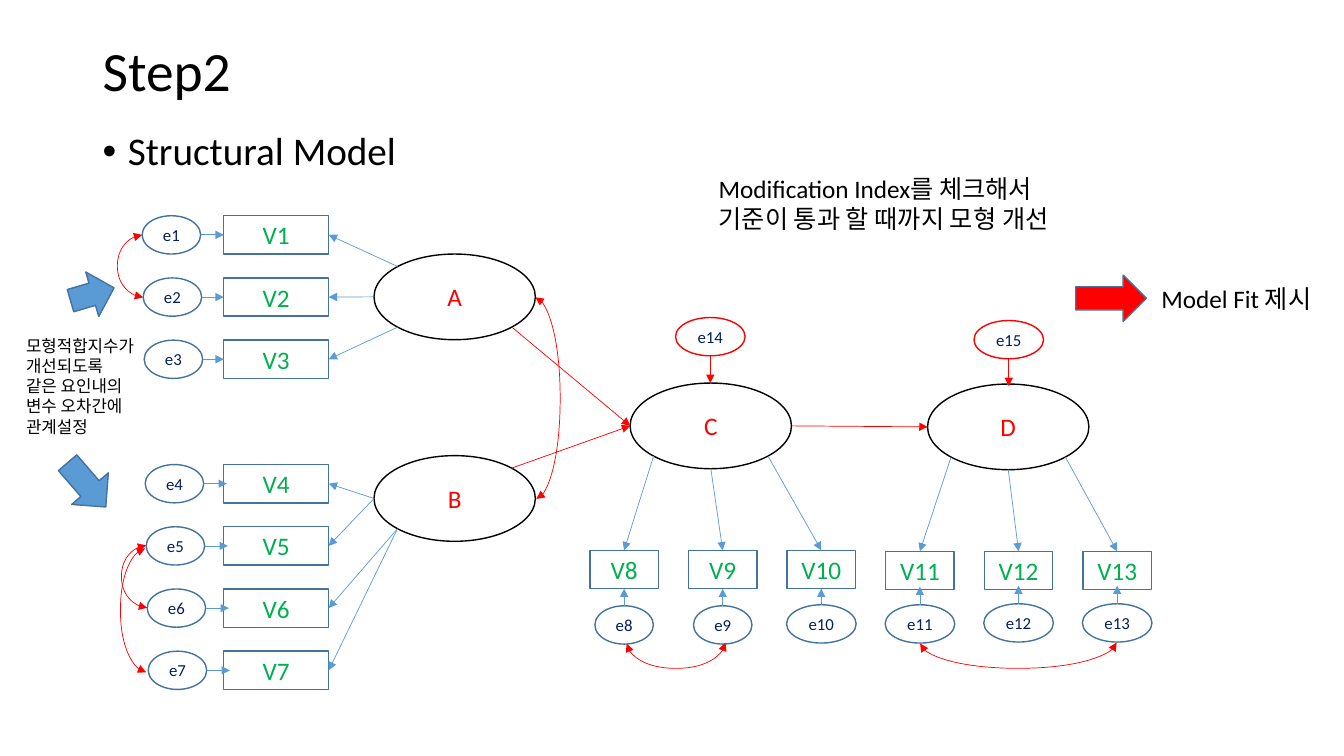
from lxml import etree
from pptx import Presentation
from pptx import util as u
from pptx.dml.color import RGBColor
from pptx.enum import shapes, text
from pptx.oxml.ns import qn

THEME = {
    "font": "Calibri", "black": "000000", "red": "FF0000", "green": "00B050",
    "navy": "002060", "outline": "43739E", "blue": "5B9BD5",
    "title": 39.6, "body": 28, "label": 18, "small": 12,
    "thin": 0.5, "border": 1,
}
TITLE = "Step2"
BULLET = "Structural Model"
NOTES = [
    ((7.03, 1.67, 3.77, 0.71), ["Modification Index를 체크해서", "기준이 통과 할 때까지 모형 개선"], "label", False),
    ((11.42, 2.76, 1.75, 0.4), ["Model Fit 제시"], "label", False),
    ((0.16, 3.28, 1.3, 1.11), ["모형적합지수가 개선되도록 같은 요인내의 변수 오차간에 관계설정"], "small", True),
]
LATENTS = {"A": (3.71, 2.52), "B": (3.71, 4.52), "C": (6.25, 3.8), "D": (9.2, 3.81)}
LATENT_SIZE = (1.6, 0.85)
LEFT_ROWS = [0, 1, 2, 4, 5, 6, 7]
LEFT_TOP, LEFT_BOTTOM = 2.14, 6.46
BOTTOM_LEFT, BOTTOM_RIGHT = 5.85, 10.74
BOX_HEIGHT = 0.38
LOADINGS = [
    ("A", "top_left", "V1"), ("A", "left", "V2"), ("A", "bottom_left", "V3"),
    ("B", "left", "V4"), ("B", "left", "V5"), ("B", "bottom_left", "V6"), ("B", "bottom_left", "V7"),
    ("C", "bottom_left", "V8"), ("C", "bottom", "V9"), ("C", "bottom_right", "V10"),
    ("D", "bottom_left", "V11"), ("D", "bottom", "V12"), ("D", "bottom_right", "V13"),
]
PATHS = [("A", "bottom_right", "C"), ("B", "top_right", "C"), ("C", "right", "D")]
DISTURBANCES = [("e14", 6.7, 3.15), ("e15", 9.66, 3.18)]
SIDE_COVARIANCES = [
    (5.31, 2.95, 4.95, 0.25), (1.41, 2.33, 2.95, -0.25),
    (1.45, 5.41, 6.03, -0.25), (1.44, 5.44, 6.67, -0.25),
]
BOTTOM_COVARIANCES = [(6.21, 7.19), (9.12, 11.07)]
BOTTOM_CURVE_Y, BOTTOM_BULGE, CURVE_STEP = 6.38, 0.25, 0.01
BLOCK_ARROWS = [
    ("RIGHT_ARROW", (10.67, 2.73, 0.7, 0.46), 0, "red"),
    ("DOWN_ARROW", (0.62, 4.52, 0.48, 0.58), 319.2, "blue"),
    ("RIGHT_ARROW", (0.69, 2.69, 0.45, 0.46), 343.7, "blue"),
]
DIAGONAL = 0.71
SITES = {
    "top": (0, -1), "left": (-1, 0), "bottom": (0, 1), "right": (1, 0),
    "top_left": (-DIAGONAL, -DIAGONAL), "bottom_left": (-DIAGONAL, DIAGONAL),
    "top_right": (DIAGONAL, -DIAGONAL), "bottom_right": (DIAGONAL, DIAGONAL),
}
RECTANGLE_SIDES = ["top", "left", "bottom", "right"]

presentation = Presentation()
presentation.slide_width, presentation.slide_height = u.Inches(13.33), u.Inches(7.5)
slide = presentation.slides.add_slide(presentation.slide_layouts[6])
boxes, indicators = {}, {}


def color(name):
    return RGBColor.from_string(THEME[name])


def inches(values):
    return [u.Inches(value) for value in values]


def style_text(frame, size, name):
    for paragraph in frame.paragraphs:
        for run in paragraph.runs:
            run.font.name = THEME["font"]
            run.font.size = u.Pt(THEME[size])
            run.font.color.rgb = color(name)


def add_text(box, lines, size, wrap=True):
    frame = slide.shapes.add_textbox(*inches(box)).text_frame
    frame.text = "\n".join(lines)
    frame.word_wrap = wrap
    style_text(frame, size, "black")
    return frame


def add_block(kind, box, line, fill=None):
    shape = slide.shapes.add_shape(getattr(shapes.MSO_SHAPE, kind), *inches(box))
    shape.shadow.inherit = False
    if fill:
        shape.fill.solid()
        shape.fill.fore_color.rgb = color(fill)
    else:
        shape.fill.background()
    shape.line.color.rgb = color(line)
    shape.line.width = u.Pt(THEME["border"])
    return shape


def add_node(name, kind, box, line, size, text_color):
    shape = add_block(kind, box, line)
    frame = shape.text_frame
    frame.text = name
    frame.word_wrap = False
    frame.vertical_anchor = text.MSO_ANCHOR.MIDDLE
    frame.margin_left = frame.margin_right = 0
    frame.paragraphs[0].alignment = text.PP_ALIGN.CENTER
    style_text(frame, size, text_color)
    boxes[name] = box
    if kind == "RECTANGLE":
        indicators[name] = shape


def site(name, side):
    left, top, width, height = boxes[name]
    across, down = SITES[side]
    return left + width / 2 * (1 + across), top + height / 2 * (1 + down)


def style_connector(connector, name, ends):
    connector.line.color.rgb = color(name)
    connector.line.width = u.Pt(THEME["thin"])
    line = connector.line._get_or_add_ln()
    for end in ends:
        etree.SubElement(line, qn("a:" + end), type="triangle")
    etree.SubElement(connector._element.spPr, qn("a:effectLst"))


def add_arrow(start, end, name):
    connector = slide.shapes.add_connector(shapes.MSO_CONNECTOR.STRAIGHT, *inches(start + end))
    for indicator, shape in indicators.items():
        for index, side in enumerate(RECTANGLE_SIDES):
            x, y = site(indicator, side)
            if abs(x - end[0]) < 0.02 and abs(y - end[1]) < 0.02:
                connector.end_connect(shape, index)
    style_connector(connector, name, ["tailEnd"])


def add_curve(x, top, bottom, bulge):
    connector = slide.shapes.add_connector(
        shapes.MSO_CONNECTOR.CURVE, *inches((x, top, x + CURVE_STEP, bottom)))
    guides = connector._element.spPr.find(qn("a:prstGeom")).get_or_add_avLst()
    etree.SubElement(guides, qn("a:gd"), name="adj1", fmla=f"val {round(bulge / CURVE_STEP * 100000)}")
    style_connector(connector, "red", ["headEnd", "tailEnd"])
    return connector


def add_bottom_curve(left, right):
    half = (right - left) / 2
    connector = add_curve((left + right) / 2, BOTTOM_CURVE_Y - half, BOTTOM_CURVE_Y + half, -BOTTOM_BULGE)
    frame = connector._element.spPr.find(qn("a:xfrm"))
    for key, value in (("rot", "5400000"), ("flipH", "1"), ("flipV", "1")):
        frame.set(key, value)


def add_headings():
    title = add_text((0.92, 0.4, 1.67, 0.66), [TITLE], "title", False)
    title.vertical_anchor = text.MSO_ANCHOR.MIDDLE
    body = add_text((0.92, 1.26, 3.87, 0.52), [BULLET], "body")
    for frame in (title, body):
        frame.paragraphs[0].line_spacing = 0.9
    properties = body.paragraphs[0]._p.get_or_add_pPr()
    properties.set("marL", str(u.Inches(0.25)))
    properties.set("indent", str(-u.Inches(0.25)))
    etree.SubElement(properties, qn("a:buFont"), typeface="Arial")
    etree.SubElement(properties, qn("a:buChar"), char="•")


def add_measurements():
    for index, row in enumerate(LEFT_ROWS):
        top = LEFT_TOP + row * (LEFT_BOTTOM - LEFT_TOP) / 7
        error = f"e{index + 1}"
        add_node(f"V{index + 1}", "RECTANGLE", (2.22, top, 1.04, BOX_HEIGHT), "outline", "label", "green")
        add_node(error, "OVAL", (1.41 + 0.01 * index, top, 0.58, BOX_HEIGHT), "outline", "small", "navy")
        x, y = site(error, "right")
        add_arrow((x, y), (x + 0.23, y), "blue")
    for index in range(6):
        left = BOTTOM_LEFT + index * (BOTTOM_RIGHT - BOTTOM_LEFT) / 5
        top = 5.46 + 0.01 * (index // 3)
        width = 0.58 if index < 2 else 0.69
        error = f"e{index + 8}"
        error_box = (left + 0.34 - width / 2, 6.01 - 0.01 * (index // 2), width, BOX_HEIGHT)
        add_node(f"V{index + 8}", "RECTANGLE", (left, top, 0.68, BOX_HEIGHT), "outline", "label", "green")
        add_node(error, "OVAL", error_box, "outline", "small", "navy")
        x, y = site(error, "top")
        add_arrow((x, y), (x, y - 0.18), "blue")


def add_structure():
    for name, corner in LATENTS.items():
        add_node(name, "OVAL", corner + LATENT_SIZE, "black", "label", "red")
    for latent, side, indicator in LOADINGS:
        target = "right" if latent in "AB" else "top"
        add_arrow(site(latent, side), site(indicator, target), "blue")
    for source, side, target in PATHS:
        add_arrow(site(source, side), site(target, "left"), "red")
    for name, left, top in DISTURBANCES:
        add_node(name, "OVAL", (left, top, 0.69, BOX_HEIGHT), "red", "small", "navy")
        x, y = site(name, "bottom")
        add_arrow((x, y), (x, y + 0.27), "red")
    for curve in SIDE_COVARIANCES:
        add_curve(*curve)
    for ends in BOTTOM_COVARIANCES:
        add_bottom_curve(*ends)


add_headings()
add_measurements()
add_structure()
for note in NOTES:
    add_text(*note)
for kind, box, angle, fill in BLOCK_ARROWS:
    add_block(kind, box, "outline", fill).rotation = angle
presentation.save("out.pptx")
